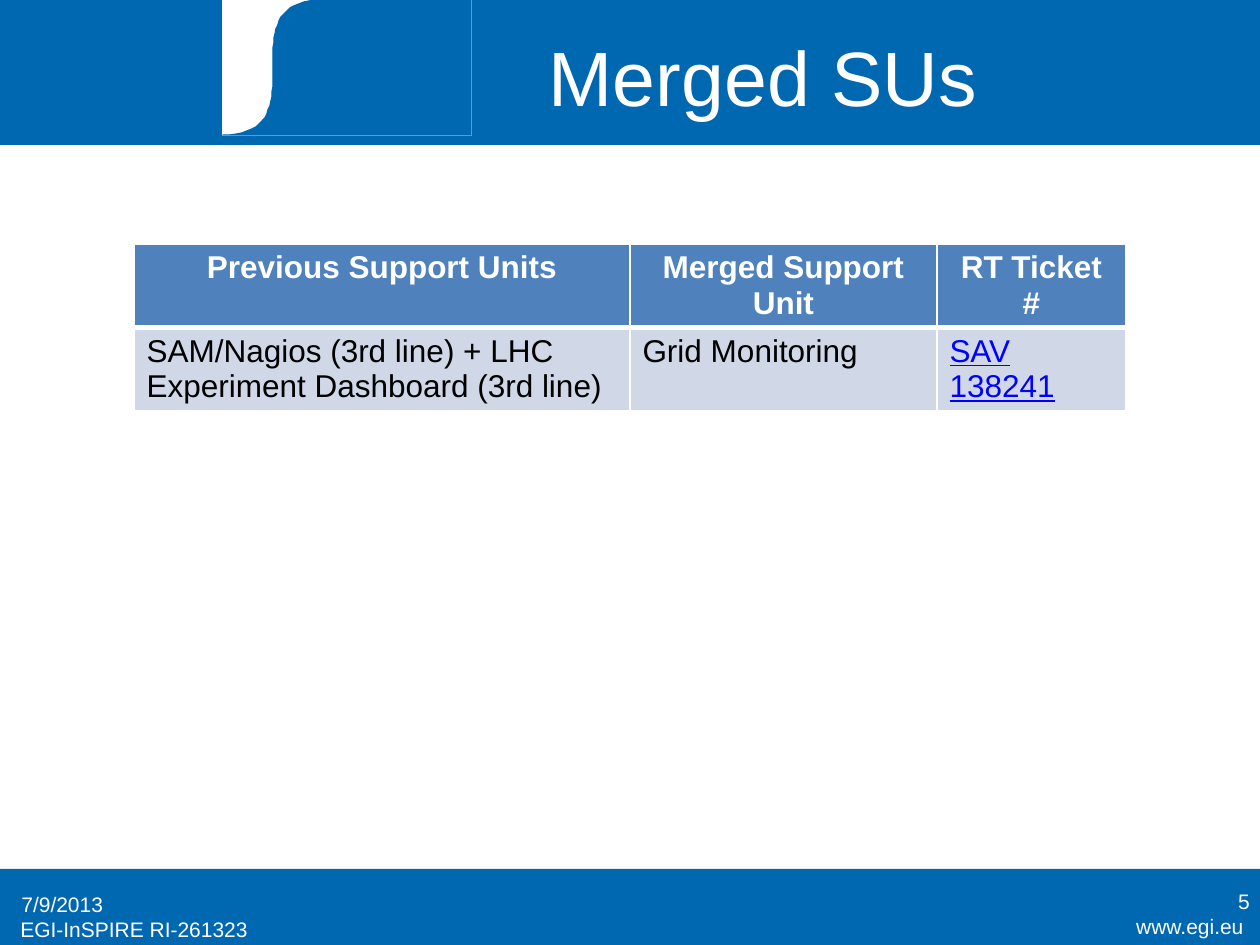
from dataclasses import dataclass

from lxml.etree import SubElement
from pptx import Presentation
from pptx.dml.color import RGBColor
from pptx.enum.shapes import MSO_SHAPE
from pptx.enum.text import MSO_ANCHOR, PP_ALIGN
from pptx.oxml.ns import qn
from pptx.util import Emu, Pt

EMU_PER_PX = 914400 / 126
FONT = "Arial"
BAND_BLUE = RGBColor(0x00, 0x67, 0xB1)
HEADER_BLUE = RGBColor(0x4F, 0x81, 0xBD)
ROW_BLUE = RGBColor(0xD0, 0xD8, 0xE8)
LINK_BLUE = RGBColor(0x00, 0x00, 0xFF)
WHITE = RGBColor(0xFF, 0xFF, 0xFF)
BLACK = RGBColor(0x00, 0x00, 0x00)


@dataclass(frozen=True)
class Box:
    """A rectangle in px."""
    left: int
    top: int
    width: int
    height: int

    def emu(self) -> tuple:
        """Return left, top, width and height in EMU."""
        return tuple(px(v) for v in (self.left, self.top, self.width, self.height))


@dataclass(frozen=True)
class Style:
    """The look of one run."""
    size: int
    color: RGBColor
    bold: bool = False
    underline: bool = False


@dataclass(frozen=True)
class Label:
    """A line of footer text."""
    text: str
    box: Box
    align: PP_ALIGN


@dataclass(frozen=True)
class Entry:
    """The content of one table cell."""
    text: str
    style: Style
    fill: RGBColor
    align: PP_ALIGN = PP_ALIGN.LEFT


TITLE = Style(44, WHITE)
FOOTER = Style(12, WHITE)
HEADING = Style(18, WHITE, bold=True)
BODY = Style(18, BLACK)
LINK = Style(18, LINK_BLUE, underline=True)

LOGO_AREA = Box(223, 0, 248, 135)
TABLE_BOX = Box(134, 244, 992, 164)
COLUMN_WIDTHS = (496, 307, 189)
HEADINGS = ("Previous Support Units", "Merged Support Unit", "RT Ticket #")
ROWS = (
    [Entry(text, HEADING, HEADER_BLUE, PP_ALIGN.CENTER) for text in HEADINGS],
    [
        Entry("SAM/Nagios (3rd line) + LHC Experiment Dashboard (3rd line)", BODY, ROW_BLUE),
        Entry("Grid Monitoring", BODY, ROW_BLUE),
        Entry("SAV 138241", LINK, ROW_BLUE),
    ],
)
FOOTER_LABELS = (
    Label("www.egi.eu", Box(1057, 907, 199, 39), PP_ALIGN.RIGHT),
    Label("EGI-InSPIRE RI-261323", Box(8, 910, 315, 39), PP_ALIGN.LEFT),
    Label("7/9/2013", Box(9, 879, 294, 50), PP_ALIGN.LEFT),
    Label("5", Box(968, 876, 294, 50), PP_ALIGN.RIGHT),
)


def px(length: int) -> Emu:
    """Convert px to EMU."""
    return Emu(round(length * EMU_PER_PX))


def write(frame, text: str, style: Style, align: PP_ALIGN) -> None:
    """Write one formatted run into a text frame."""
    paragraph = frame.paragraphs[0]
    paragraph.alignment = align
    run = paragraph.add_run()
    run.text = text
    font = run.font
    font.name, font.size = FONT, Pt(style.size)
    font.bold, font.underline = style.bold, style.underline
    font.color.rgb = style.color


def paint(shape, color: RGBColor, outlined: bool = True) -> None:
    """Give a shape one colour and no shadow."""
    shape.shadow.inherit = False
    shape.fill.solid()
    shape.fill.fore_color.rgb = color
    if outlined:
        shape.line.color.rgb = color
        shape.line.width = Pt(0.75)
    else:
        shape.line.fill.background()


def add_band(slide, box: Box, color: RGBColor, outlined: bool = True) -> None:
    """Draw a plain coloured rectangle."""
    paint(slide.shapes.add_shape(MSO_SHAPE.RECTANGLE, *box.emu()), color, outlined)


def add_curve(slide, area: Box, reach: int, steps: int = 40) -> None:
    """Cover the right of an area with an S-shaped left edge."""
    right, bottom = area.left + area.width, area.top + area.height
    points = []
    for step in range(steps + 1):
        t = step / steps
        x = area.left + reach * (3 * t * (1 - t) ** 2 + t ** 3)
        y = area.top + area.height * ((1 - t) ** 3 + 3 * t * (1 - t) ** 2)
        points.append((x, y))
    builder = slide.shapes.build_freeform(right, area.top, scale=EMU_PER_PX)
    builder.add_line_segments([(right, bottom), *points], close=True)
    paint(builder.convert_to_shape(), BAND_BLUE)


def add_title(slide, text: str, box: Box) -> None:
    """Place the title above the header band."""
    title = slide.shapes.title
    title.left, title.top, title.width, title.height = box.emu()
    title.text_frame.vertical_anchor = MSO_ANCHOR.MIDDLE
    write(title.text_frame, text, TITLE, PP_ALIGN.CENTER)
    slide.shapes._spTree.append(title._element)


def add_label(slide, label: Label) -> None:
    """Add one footer text box."""
    frame = slide.shapes.add_textbox(*label.box.emu()).text_frame
    frame.word_wrap = True
    frame.vertical_anchor = MSO_ANCHOR.MIDDLE
    write(frame, label.text, FOOTER, label.align)


def set_borders(cell, bottom: int) -> None:
    """Give a cell white borders, with its own bottom width in points."""
    properties = cell._tc.get_or_add_tcPr()
    for side, width in (("L", 1), ("R", 1), ("T", 1), ("B", bottom)):
        line = SubElement(properties, qn(f"a:ln{side}"), w=str(Pt(width)))
        fill = SubElement(line, qn("a:solidFill"))
        SubElement(fill, qn("a:srgbClr"), val=str(WHITE))


def add_units_table(slide) -> None:
    """Add the table of merged support units."""
    table = slide.shapes.add_table(len(ROWS), len(COLUMN_WIDTHS), *TABLE_BOX.emu()).table
    for column, width in zip(table.columns, COLUMN_WIDTHS):
        column.width = px(width)
    for row_index, entries in enumerate(ROWS):
        for column_index, entry in enumerate(entries):
            cell = table.cell(row_index, column_index)
            set_borders(cell, bottom=3 if row_index == 0 else 1)
            cell.fill.solid()
            cell.fill.fore_color.rgb = entry.fill
            write(cell.text_frame, entry.text, entry.style, entry.align)


def main() -> None:
    """Build and save the slide."""
    deck = Presentation()
    deck.slide_width, deck.slide_height = px(1260), px(945)
    slide = deck.slides.add_slide(deck.slide_layouts[5])
    add_band(slide, Box(0, 869, 1260, 76), BAND_BLUE, outlined=False)
    add_band(slide, Box(0, 0, 1260, 144), BAND_BLUE)
    add_band(slide, LOGO_AREA, WHITE)
    add_curve(slide, LOGO_AREA, reach=100)
    for label in FOOTER_LABELS:
        add_label(slide, label)
    add_title(slide, "Merged SUs", Box(292, 16, 942, 120))
    add_units_table(slide)
    deck.save("out.pptx")


if __name__ == "__main__":
    main()
